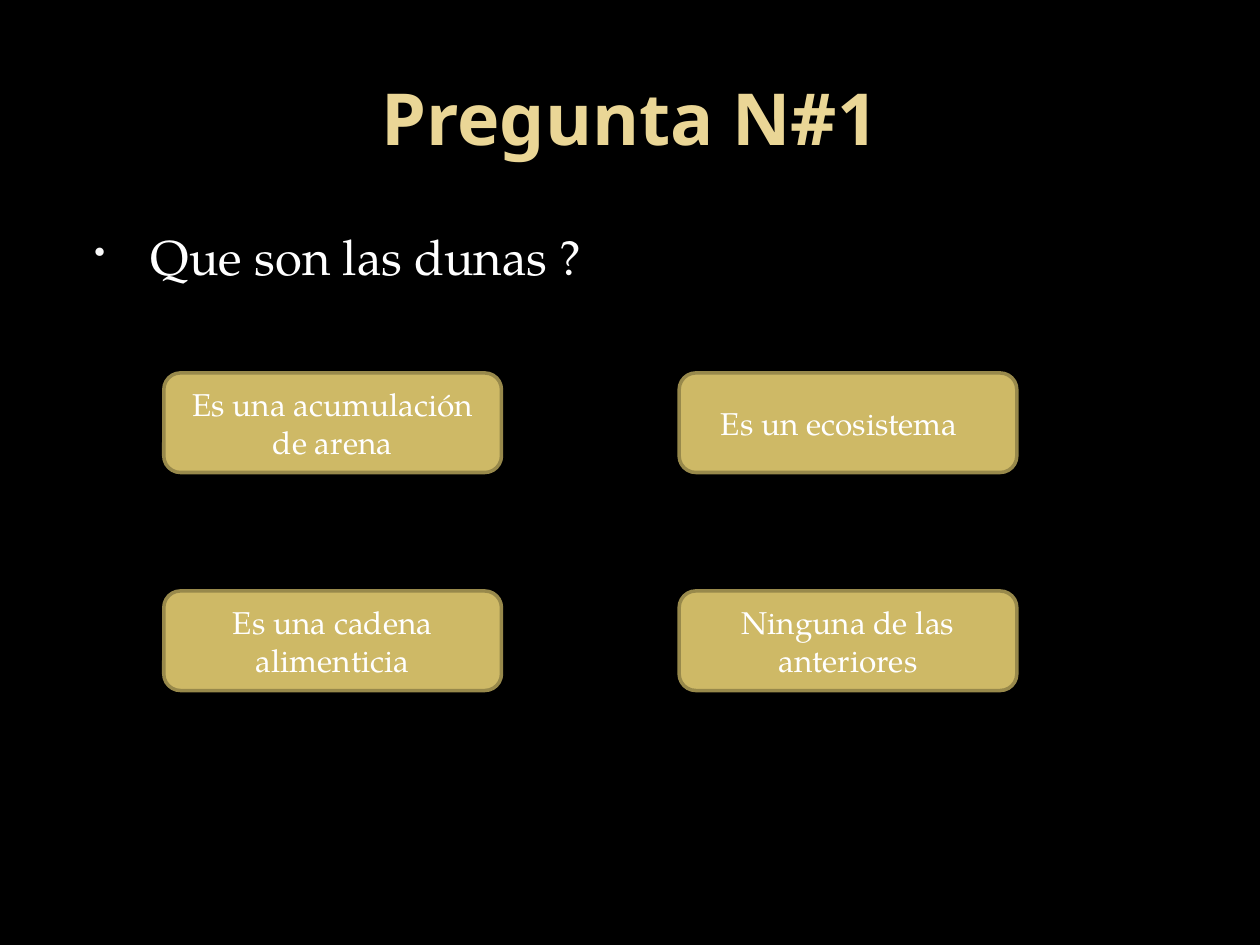
from dataclasses import dataclass
from itertools import product

from lxml.etree import SubElement
from pptx import Presentation
from pptx.dml.color import RGBColor
from pptx.enum.shapes import MSO_SHAPE
from pptx.enum.text import MSO_ANCHOR, PP_ALIGN
from pptx.oxml.ns import qn
from pptx.util import Inches, Pt

COLS, ROWS = 100, 75
CELL = Inches(10) // COLS


@dataclass(frozen=True)
class Theme:
    """Colours, fonts and type sizes of the quiz."""
    back: str = "000000"
    gold: str = "EAD696"
    fill: str = "CEB966"
    edge: str = "98894B"
    white: str = "FFFFFF"
    dot: str = "F9F9F9"
    head: str = "Noto Sans"
    body: str = "TeX Gyre Pagella"
    big: int = 41
    mid: int = 28
    small: int = 18


LOOK = Theme()


def tint(code):
    """Turn a hex code into a colour."""
    return RGBColor.from_string(code)


def span(box):
    """Turn grid columns and rows into lengths."""
    return [round(part * CELL) for part in box]


def write(shape, text, font=LOOK.body, size=LOOK.small, color=LOOK.white,
          bold=False, align=PP_ALIGN.CENTER, anchor=MSO_ANCHOR.MIDDLE, right=1):
    """Put formatted text in a shape and return its paragraph."""
    frame = shape.text_frame
    frame.word_wrap = True
    frame.vertical_anchor = anchor
    frame.margin_right = round(right * CELL)
    para = frame.paragraphs[0]
    para.alignment = align
    run = para.add_run()
    run.text = text
    run.font.name, run.font.size, run.font.bold = font, Pt(size), bold
    run.font.color.rgb = tint(color)
    return para


def title(slide, box, text):
    """Place the heading."""
    shape = slide.shapes.add_textbox(*span(box))
    write(shape, text, font=LOOK.head, size=LOOK.big, color=LOOK.gold, bold=True)


def query(slide, box, text):
    """Place the bulleted question."""
    shape = slide.shapes.add_textbox(*span(box))
    para = write(shape, text, size=LOOK.mid, align=PP_ALIGN.LEFT,
                 anchor=MSO_ANCHOR.TOP)
    para.space_before = Pt(0.2 * LOOK.mid)
    props = para._p.get_or_add_pPr()
    props.set("marL", str(Inches(0.6)))
    props.set("indent", str(-Inches(0.45)))
    color = SubElement(props, qn("a:buClr"))
    SubElement(color, qn("a:srgbClr"), val=LOOK.dot)
    SubElement(props, qn("a:buSzPct"), val="65000")
    SubElement(props, qn("a:buChar"), char="•")


def button(slide, box, text, right=1):
    """Place one answer."""
    shape = slide.shapes.add_shape(MSO_SHAPE.ROUNDED_RECTANGLE, *span(box))
    shape.shadow.inherit = False
    shape.fill.solid()
    shape.fill.fore_color.rgb = tint(LOOK.fill)
    shape.line.color.rgb = tint(LOOK.edge)
    shape.line.width = Pt(2)
    write(shape, text, right=right)


def choices(slide, box, items, wide=26.8, high=7.9):
    """Spread four answers over the corners of a box."""
    left, top, width, height = box
    spots = product((top, top + height - high), (left, left + width - wide))
    for (y, x), (text, right) in zip(spots, items):
        button(slide, (x, y, wide, high), text, right)


def main():
    """Build and save the quiz slide."""
    deck = Presentation()
    deck.slide_width, deck.slide_height = COLS * CELL, ROWS * CELL
    slide = deck.slides.add_slide(deck.slide_layouts[6])
    slide.background.fill.solid()
    slide.background.fill.fore_color.rgb = tint(LOOK.back)
    title(slide, (5, 3, 90, 12.5), "Pregunta N#1")
    query(slide, (5, 17.5, 90, 51.5), "Que son las dunas ?")
    choices(slide, (13, 29.6, 67.7, 25.2), (
        ("Es una acumulación de arena", 1),
        ("Es un ecosistema", 2.4),
        ("Es una cadena alimenticia", 1),
        ("Ninguna de las anteriores", 1),
    ))
    deck.save("out.pptx")


if __name__ == "__main__":
    main()
